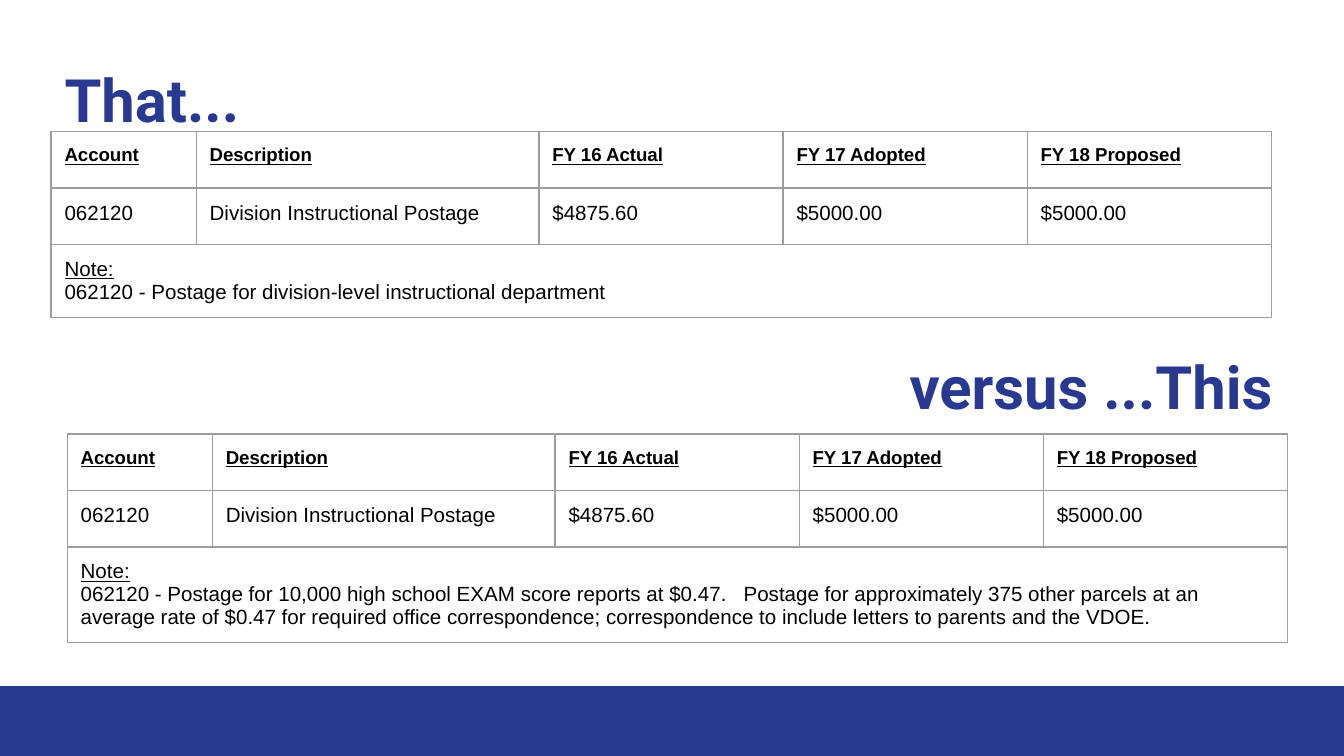
from lxml import etree
from pptx import Presentation
from pptx import util as u
from pptx.dml.color import RGBColor
from pptx.enum import shapes, text
from pptx.oxml.ns import qn

WIDTH = u.Inches(10)
HEIGHT = WIDTH * 9 // 16
BLUE, GREY, BLACK = "2A3990", "9E9E9E", "000000"
TABLE_WIDTH, ACCOUNT, DESCRIPTION = 9.08, 1.08, 2.55
YEAR = (TABLE_WIDTH - ACCOUNT - DESCRIPTION) / 3
COLUMNS = [ACCOUNT, DESCRIPTION, YEAR, YEAR, YEAR]
ROW = 0.42
HEADER = ["Account", "Description", "FY 16 Actual", "FY 17 Adopted", "FY 18 Proposed"]
VALUES = ["062120", "Division Instructional Postage", "$4875.60", "$5000.00", "$5000.00"]
BRIEF_NOTE = "062120 - Postage for division-level instructional department"
DETAILED_NOTE = (
    "062120 - Postage for 10,000 high school EXAM score reports at $0.47.   "
    "Postage for approximately 375 other parcels at an average rate of $0.47 "
    "for required office correspondence; correspondence to include letters "
    "to parents and the VDOE."
)


def colour(value):
    return RGBColor.from_string(value)


def set_margins(target):
    for side in ("left", "right", "top", "bottom"):
        setattr(target, f"margin_{side}", u.Inches(0.1))


def format_text(para, font, size, shade, bold=False, underline=False):
    for span in para.runs:
        span.font.name = font
        span.font.size = u.Pt(size)
        span.font.color.rgb = colour(shade)
        span.font.bold = bold
        span.font.underline = underline


def place_heading(shape, box, words, align):
    shape.left, shape.top, shape.width, shape.height = map(u.Inches, box)
    frame = shape.text_frame
    frame.text = words
    frame.word_wrap = True
    frame.auto_size = text.MSO_AUTO_SIZE.NONE
    frame.vertical_anchor = text.MSO_ANCHOR.TOP
    set_margins(frame)
    frame.paragraphs[0].alignment = align
    format_text(frame.paragraphs[0], "Roboto", 32, BLUE, bold=True)


def outline_cell(cell):
    properties = cell._tc.get_or_add_tcPr()
    for index, side in enumerate(("lnL", "lnR", "lnT", "lnB")):
        line = etree.Element(qn(f"a:{side}"), w=str(u.Pt(0.75)))
        fill = etree.SubElement(line, qn("a:solidFill"))
        etree.SubElement(fill, qn("a:srgbClr"), val=GREY)
        properties.insert(index, line)


def fill_cell(cell, words, size, bold=False, underline=False):
    cell.text = words
    format_text(cell.text_frame.paragraphs[0], "Arial", size, BLACK, bold, underline)


def add_budget(page, left, top, note, note_height):
    heights = [ROW, ROW, note_height]
    box = map(u.Inches, (left, top, TABLE_WIDTH, sum(heights)))
    table = page.shapes.add_table(len(heights), len(COLUMNS), *box).table
    table.first_row = table.horz_banding = False
    for column, width in zip(table.columns, COLUMNS):
        column.width = u.Inches(width)
    for row, height in zip(table.rows, heights):
        row.height = u.Inches(height)
    for cell in table.iter_cells():
        set_margins(cell)
        cell.fill.background()
        outline_cell(cell)
    for index, (label, value) in enumerate(zip(HEADER, VALUES)):
        fill_cell(table.cell(0, index), label, 10, bold=True, underline=True)
        fill_cell(table.cell(1, index), value, 11)
    note_cell = table.cell(2, 0)
    note_cell.merge(table.cell(2, len(COLUMNS) - 1))
    fill_cell(note_cell, "Note:", 11, underline=True)
    para = note_cell.text_frame.add_paragraph()
    para.text = note
    format_text(para, "Arial", 11, BLACK)


def add_footer_band(page, height):
    band = page.shapes.add_shape(
        shapes.MSO_SHAPE.RECTANGLE, 0, HEIGHT - height, WIDTH, height
    )
    band.shadow.inherit = False
    band.fill.solid()
    band.fill.fore_color.rgb = colour(BLUE)
    band.line.fill.background()


def main():
    deck = Presentation()
    deck.slide_width, deck.slide_height = WIDTH, HEIGHT
    page = deck.slides.add_slide(deck.slide_layouts[5])
    add_footer_band(page, u.Inches(0.52))
    place_heading(page.shapes.title, (0.38, 0.37, 9.3, 0.75), "That...", text.PP_ALIGN.LEFT)
    answer = page.shapes.add_textbox(0, 0, 0, 0)
    place_heading(answer, (5.81, 2.5, 3.76, 0.63), "versus ...This", text.PP_ALIGN.RIGHT)
    add_budget(page, 0.38, 0.98, BRIEF_NOTE, 0.54)
    add_budget(page, 0.5, 3.23, DETAILED_NOTE, 0.71)
    deck.save("out.pptx")


if __name__ == "__main__":
    main()
